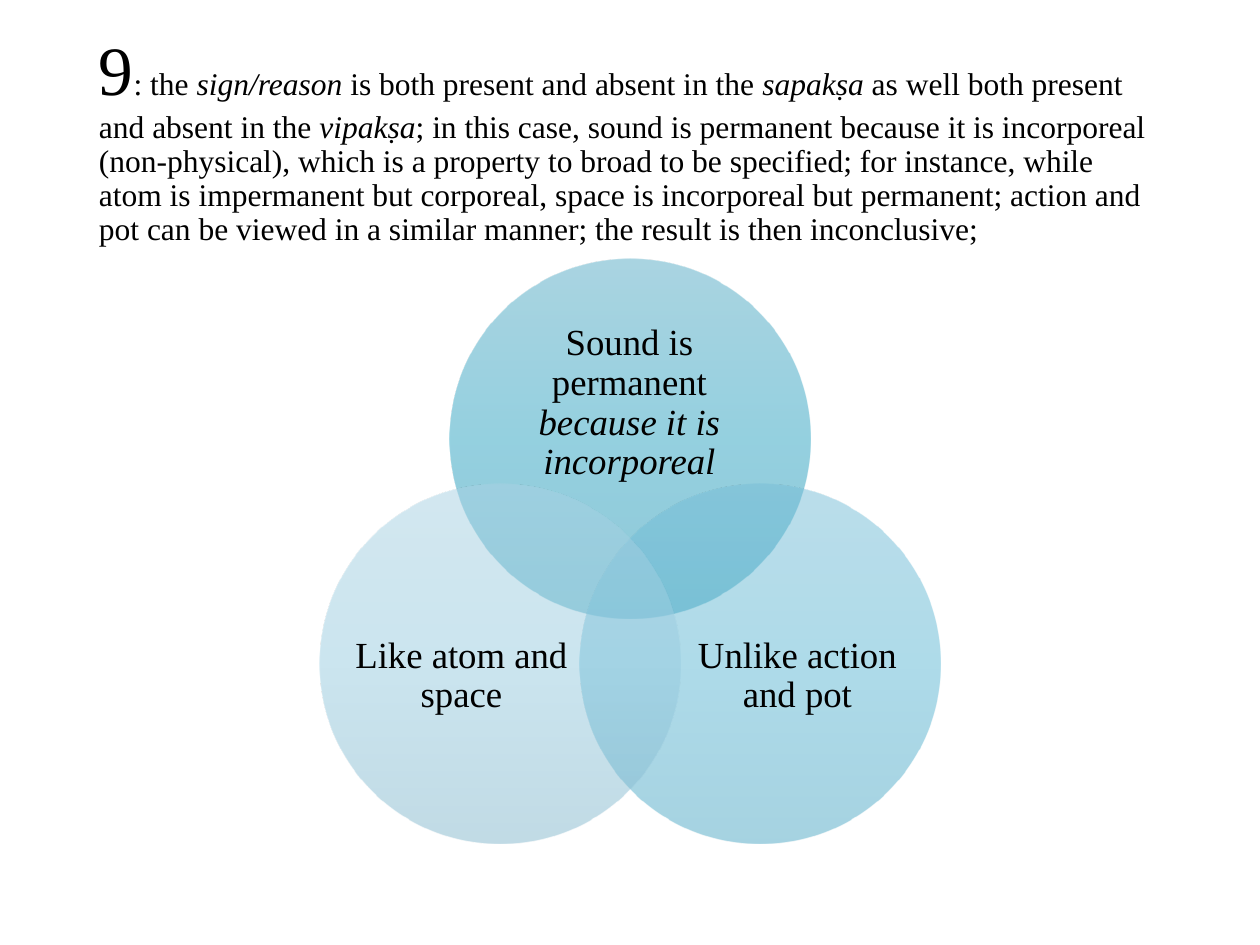
from lxml import etree
from pptx import Presentation
from pptx import util as u
from pptx.dml.color import RGBColor
from pptx.enum import shapes, text
from pptx.oxml import ns

PX = u.Inches(1) // 126
DIAMETER = 360


def add_text(runs, left, top, width, height, size, inset=0, align=text.PP_ALIGN.CENTER):
    """Add a vertically centred box; runs are (wording, italic, size or None)."""
    box = page.shapes.add_textbox(left * PX, top * PX, width * PX, height * PX)
    frame = box.text_frame
    frame.word_wrap = True
    frame.vertical_anchor = text.MSO_ANCHOR.MIDDLE
    frame.margin_left = frame.margin_right = inset * PX
    frame.margin_top = frame.margin_bottom = inset // 2 * PX
    para = frame.paragraphs[0]
    para.alignment = align
    para.line_spacing = 0.9
    for wording, italic, own_size in runs:
        span = para.add_run()
        span.text = wording
        span.font.name = "Times New Roman"
        span.font.size = u.Pt(own_size or size)
        span.font.italic = italic
        span.font.color.rgb = RGBColor.from_string("000000")


def fill_gradient(shape, colors):
    """Fill from top to bottom with evenly spaced, half-transparent colours."""
    shape.fill.gradient()
    shape.fill.gradient_angle = 270
    stops = shape.element.spPr.find(ns.qn("a:gradFill")).find(ns.qn("a:gsLst"))
    for stop in list(stops):
        stops.remove(stop)
    for i, color in enumerate(colors):
        position = 100000 * i // (len(colors) - 1)
        stop = etree.SubElement(stops, ns.qn("a:gs"), pos=str(position))
        tint = etree.SubElement(stop, ns.qn("a:srgbClr"), val=color)
        etree.SubElement(tint, ns.qn("a:alpha"), val="50000")


deck = Presentation()
deck.slide_width = u.Inches(10)
deck.slide_height = u.Inches(7.5)
page = deck.slides.add_slide(deck.slide_layouts[6])

explanation = [
    ("9", False, 39.6),
    (": the ", False, None),
    ("sign/reason", True, None),
    (" is both present and absent in the ", False, None),
    ("sapakṣa", True, None),
    (" as well both present and absent in the ", False, None),
    ("vipakṣa", True, None),
    ("; in this case, sound is permanent because it is incorporeal (non-physical), "
     "which is a property to broad to be specified; for instance, while atom is "
     "impermanent but corporeal, space is incorporeal but permanent; action and pot "
     "can be viewed in a similar manner; the result is then inconclusive;", False, None),
]
add_text(explanation, 87, 50, 1086, 183, 18, inset=12, align=text.PP_ALIGN.LEFT)

# Circle corner, gradient, label area, label runs
venn = [
    ((450, 259), ("55ABC5", "2AA3C2", "1F94B2"), (498, 323, 263, 161),
     [("Sound is permanent ", False, None), ("because it is incorporeal", True, None)]),
    ((580, 484), ("77BED7", "5DB9D6", "4CA8C5"), (690, 577, 215, 198),
     [("Unlike action and pot", False, None)]),
    ((320, 484), ("A9D2E3", "99CDE1", "84B8CD"), (354, 577, 215, 198),
     [("Like atom and space", False, None)]),
]
for (left, top), colors, area, label in venn:
    circle = page.shapes.add_shape(
        shapes.MSO_SHAPE.OVAL, left * PX, top * PX, DIAMETER * PX, DIAMETER * PX)
    circle.shadow.inherit = False
    circle.line.fill.background()
    fill_gradient(circle, colors)
    add_text(label, *area, 21)

deck.save("out.pptx")
